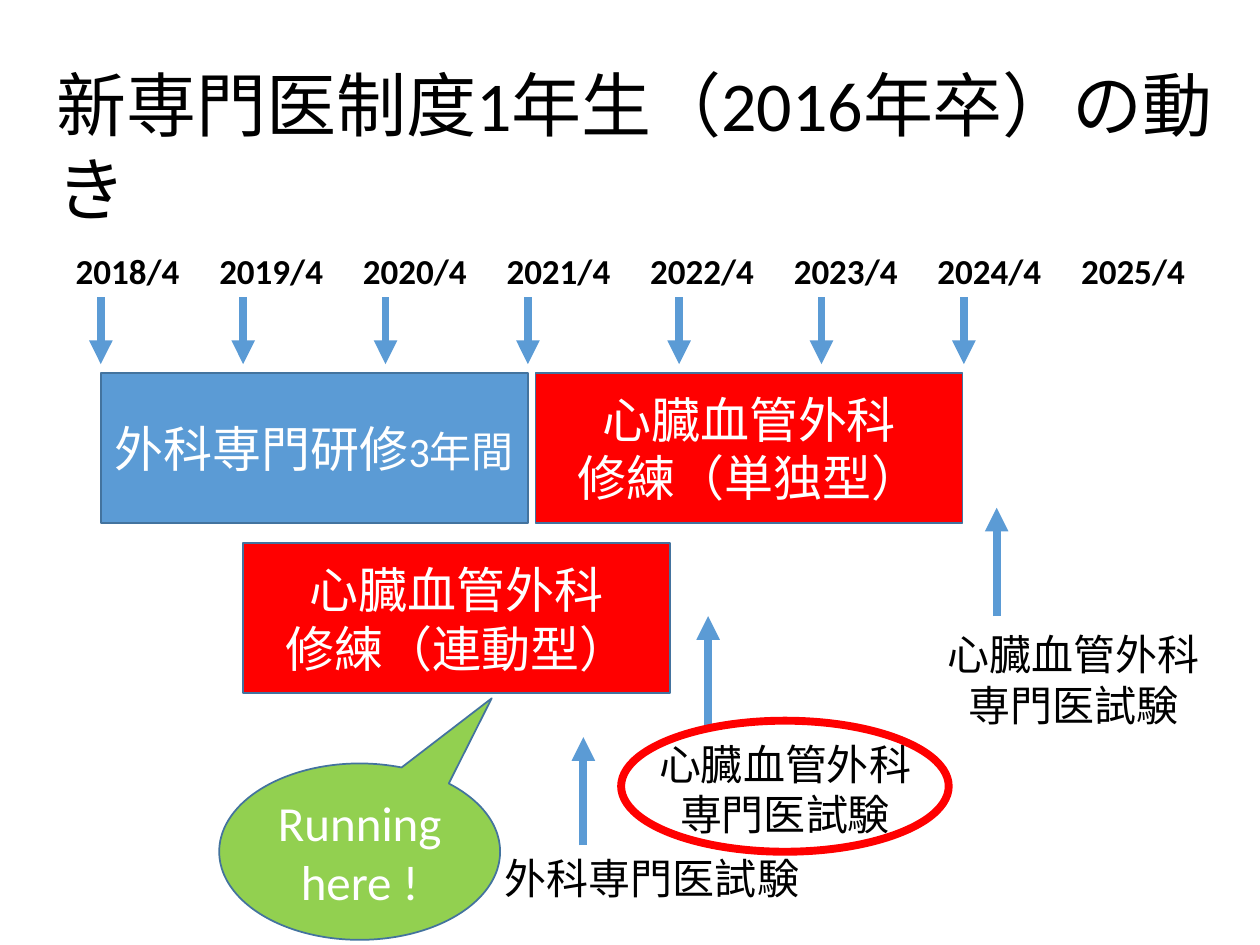
from pptx import Presentation, util as u
from pptx.dml.color import RGBColor
from pptx.enum import shapes, text
from pptx.oxml.ns import qn
from lxml import etree

SCALE = 9144  # EMU per px, 100 px to the inch
BLUE, RED, GREEN, EDGE = "5B9BD5", "FF0000", "92D050", "43739E"
BLACK, WHITE = "000000", "FFFFFF"
LEFT, CENTER = text.PP_ALIGN.LEFT, text.PP_ALIGN.CENTER


def px(*lengths):
    return [u.Emu(length * SCALE) for length in lengths]


def color(value):
    return RGBColor.from_string(value)


class Painter:
    font = "Calibri"
    stroke = 4.5

    def __init__(self, slide):
        self.slide = slide

    def format_span(self, span, size, ink, bold=False):
        span.font.name, span.font.size = self.font, u.Pt(size)
        span.font.bold = bold
        span.font.color.rgb = color(ink)

    def fill_text(self, shape, lines, size, ink, align=CENTER, bold=False):
        frame = shape.text_frame
        frame.text = "\n".join(lines)
        for para in frame.paragraphs:
            para.alignment = align
            for span in para.runs:
                self.format_span(span, size, ink, bold)
        return frame

    def title(self, area, words, size, pitch):
        """Title whose words stand on tab stops at an equal pitch."""
        box = self.slide.shapes.title
        box.left, box.top, box.width, box.height = px(*area)
        frame = self.fill_text(box, ["\t".join(words)], size, BLACK, LEFT, True)
        frame.auto_size = text.MSO_AUTO_SIZE.NONE
        frame.vertical_anchor = text.MSO_ANCHOR.MIDDLE
        para = frame.paragraphs[0]
        para.line_spacing = 0.9
        stops = etree.SubElement(para._p.get_or_add_pPr(), qn("a:tabLst"))
        for index in range(1, len(words)):
            etree.SubElement(stops, qn("a:tab"), pos=str(index * pitch * SCALE), algn="l")

    def label(self, area, lines, size, align=CENTER):
        box = self.slide.shapes.add_textbox(*px(*area))
        frame = self.fill_text(box, lines, size, BLACK, align)
        frame.word_wrap = False
        frame.auto_size = text.MSO_AUTO_SIZE.SHAPE_TO_FIT_TEXT

    def shape(self, kind, area, fill=None, edge=EDGE, width=1, lines=()):
        shape = self.slide.shapes.add_shape(kind, *px(*area))
        shape.shadow.inherit = False
        if fill:
            shape.fill.solid()
            shape.fill.fore_color.rgb = color(fill)
        else:
            shape.fill.background()
        shape.line.color.rgb = color(edge)
        shape.line.width = u.Pt(width)
        if lines:
            frame = self.fill_text(shape, lines, 28, WHITE)
            frame.vertical_anchor = text.MSO_ANCHOR.MIDDLE
        return shape

    def arrow(self, x, start, end):
        line = self.slide.shapes.add_connector(
            shapes.MSO_CONNECTOR.STRAIGHT, *px(x, start, x, end))
        line.line.color.rgb = color(BLUE)
        line.line.width = u.Pt(self.stroke)
        etree.SubElement(line.line._get_or_add_ln(), qn("a:tailEnd"), type="triangle")
        etree.SubElement(line._element.spPr, qn("a:effectLst"))


def main():
    deck = Presentation()
    deck.slide_width, deck.slide_height = px(1000, 750)
    page = Painter(deck.slides.add_slide(deck.slide_layouts[5]))

    # Heading and the row of dates
    page.title((50, 144, 924, 145), [f"{year}/4" for year in range(2018, 2026)], 20, 114)
    page.label((35, 44, 939, 77), ["新専門医制度1年生（2016年卒）の動き"], 40, LEFT)

    # Training periods, each three years long
    year, length, height = 113, 339, 119
    first, second = 80, 425
    rectangle = shapes.MSO_SHAPE.RECTANGLE
    surgery = page.shape(rectangle, (first, 296, length, height), BLUE,
                         lines=["外科専門研修"])
    span = surgery.text_frame.paragraphs[0].add_run()
    span.text = "3年間"
    page.format_span(span, 24, WHITE)
    for left, top, style in ((second, 296, "単独型"), (193, 431, "連動型")):
        page.shape(rectangle, (left, top, length, height), RED,
                   lines=["心臓血管外科", f"修練（{style}）"])

    # Arrows from the dates to the start of each year
    starts = [first + year * index for index in range(4)]
    starts += [second + 1 + year * index for index in range(1, 4)]
    for x in starts:
        page.arrow(x, 236, 289)

    # Examinations
    for x, bottom in ((463, 671), (562, 575), (791, 489)):
        page.arrow(x, bottom, bottom - 86)
    page.label((391, 672, 256, 50), ["外科専門医試験"], 24, LEFT)
    for left, top in ((512, 581), (741, 494)):
        page.label((left, top, 222, 91), ["心臓血管外科", "専門医試験"], 24)

    # Callout and highlight
    callout = page.shape(shapes.MSO_SHAPE.OVAL_CALLOUT, (174, 606, 223, 140), GREEN,
                         lines=["Running here !"])
    callout.adjustments[0], callout.adjustments[1] = 0.47, -0.87
    page.shape(shapes.MSO_SHAPE.OVAL, (493, 572, 260, 104), edge=RED, width=page.stroke)

    deck.save("out.pptx")


if __name__ == "__main__":
    main()
